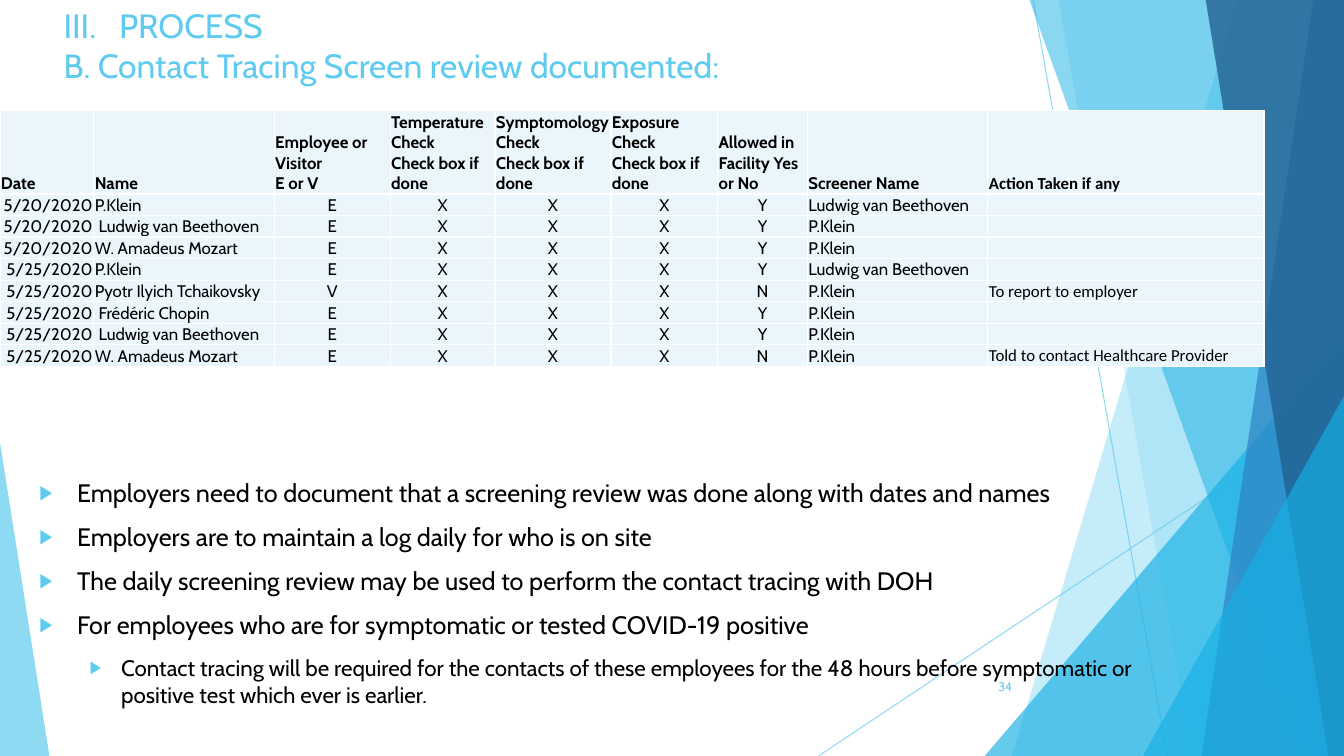
"""Build the contact tracing slide with its screening log and guidance list."""
import lxml.etree
import pptx
import pptx.dml.color
import pptx.enum.shapes
import pptx.enum.text
import pptx.oxml.ns
import pptx.util

Pt = pptx.util.Pt
ALIGN = pptx.enum.text.PP_ALIGN
ANCHOR = pptx.enum.text.MSO_ANCHOR

WIDTH, HEIGHT = 960, 540
SKY, AQUA, BLACK, WHITE, CELL = "5FCBEF", "17B0E4", "000000", "FFFFFF", "EAF6FC"
FONT, ACTION_FONT = "Cabin", "Calibri"

TITLE = ["III.\tPROCESS", "B. Contact Tracing Screen review documented:"]
TITLE_TAB = 39.6
HEADERS = [
    "Date", "Name", "Employee or Visitor\nE or V",
    "Temperature Check\nCheck box if done", "Symptomology Check\nCheck box if done",
    "Exposure Check\nCheck box if done", "Allowed in Facility Yes or No",
    "Screener Name", "Action Taken if any",
]
LOG = [
    ("5/20/2020", "P.Klein", "E", "Y", "Ludwig van Beethoven", ""),
    ("5/20/2020", " Ludwig van Beethoven", "E", "Y", "P.Klein", ""),
    ("5/20/2020", "W. Amadeus Mozart", "E", "Y", "P.Klein", ""),
    ("5/25/2020", "P.Klein", "E", "Y", "Ludwig van Beethoven", ""),
    ("5/25/2020", "Pyotr Ilyich Tchaikovsky", "V", "N", "P.Klein", "To report to employer"),
    ("5/25/2020", " Frédéric Chopin", "E", "Y", "P.Klein", ""),
    ("5/25/2020", " Ludwig van Beethoven", "E", "Y", "P.Klein", ""),
    ("5/25/2020", "W. Amadeus Mozart", "E", "N", "P.Klein", "Told to contact Healthcare Provider"),
]
CHECKS = ("X", "X", "X")
COLUMN_WIDTHS = [67, 128.9, 82.8, 74.9, 82.8, 76.3, 64.1, 128.9, 197.3]
COLUMN_ALIGN = [ALIGN.RIGHT, ALIGN.LEFT] + [ALIGN.CENTER] * 5 + [ALIGN.LEFT] * 2
HEADER_HEIGHT, ROW_HEIGHT = 43.2, 14.5

POINTS = [
    (0, "Employers need to document that a screening review was done along with dates and names"),
    (0, "Employers are to maintain a log daily for who is on site"),
    (0, "The daily screening review may be used to perform the contact tracing with DOH"),
    (0, "For employees who are for symptomatic or tested COVID-19 positive"),
    (1, "Contact tracing will be required for the contacts of these employees for the 48 hours "
        "before symptomatic or positive test which ever is earlier."),
]
LEVELS = [(18, 27, 27), (16, 58.5, 22.5)]

RAYS = [(738, 0, 833.8, HEIGHT), (WIDTH, 290.2, 584.6, HEIGHT)]
FACETS = [
    ("band", (884.2, 722.9), SKY, 36),
    ("band", (756, 851.8), SKY, 20),
    ("triangle", (703.4, 239.8, 256.6, 1), AQUA, 66),
    ("band", (735.1, 929.5), AQUA, 50),
    ("band", (938.2, 858.2), "2E83C3", 70),
    ("band", (861.1, 949), "226292", 80),
    ("triangle", (816.5, 283, 143.5, 1), AQUA, 66),
    ("triangle", (0, 316.1, 35.3, 0), SKY, 70),
]
BAND_TOP = -0.7


def color(value):
    return pptx.dml.color.RGBColor.from_string(value)


def add_xml(parent, tag, **attributes):
    return lxml.etree.SubElement(parent, pptx.oxml.ns.qn(tag), attributes)


def paint(fill, value, opacity):
    fill.solid()
    fill.fore_color.rgb = color(value)
    tint = fill._xPr.find(".//" + pptx.oxml.ns.qn("a:srgbClr"))
    add_xml(tint, "a:alpha", val=str(opacity * 1000))


def write(paragraph, text, size, value, font=FONT, bold=False):
    for index, line in enumerate(text.split("\n")):
        if index:
            paragraph.add_line_break()
        run = paragraph.add_run()
        run.text = line
        run.font.size, run.font.name, run.font.bold = Pt(size), font, bold
        run.font.color.rgb = color(value)


def place(shape, left, top, width, height):
    shape.left, shape.top, shape.width, shape.height = map(Pt, (left, top, width, height))


def add_decoration(shapes):
    for ray in RAYS:
        connector = shapes.add_connector(
            pptx.enum.shapes.MSO_CONNECTOR.STRAIGHT, *map(Pt, ray))
        connector.line.width = Pt(0.75)
        paint(connector.line.fill, SKY, 70)
        add_xml(connector._element.spPr, "a:effectLst")
    for kind, geometry, value, opacity in FACETS:
        if kind == "band":
            upper, lower = geometry
            builder = shapes.build_freeform(Pt(upper), Pt(BAND_TOP))
            corners = [(WIDTH, BAND_TOP), (WIDTH, HEIGHT), (lower, HEIGHT)]
            builder.add_line_segments([(Pt(x), Pt(y)) for x, y in corners])
            facet = builder.convert_to_shape()
        else:
            left, top, width, apex = geometry
            facet = shapes.add_shape(
                pptx.enum.shapes.MSO_SHAPE.ISOSCELES_TRIANGLE,
                Pt(left), Pt(top), Pt(width), Pt(HEIGHT - top))
            facet.adjustments[0] = apex
        facet.shadow.inherit = False
        facet.line.fill.background()
        paint(facet.fill, value, opacity)


def fill_title(title):
    place(title, 38.2, 0, 676.8, 103.7)
    frame = title.text_frame
    frame.word_wrap = True
    frame.auto_size = pptx.enum.text.MSO_AUTO_SIZE.NONE
    frame.vertical_anchor = ANCHOR.TOP
    paragraph = frame.paragraphs[0]
    paragraph.alignment = ALIGN.LEFT
    tabs = add_xml(paragraph._p.get_or_add_pPr(), "a:tabLst")
    add_xml(tabs, "a:tab", pos=str(Pt(TITLE_TAB)), algn="l")
    write(paragraph, "\n".join(TITLE), 24, SKY)


def format_cell(cell):
    cell.vertical_anchor = ANCHOR.BOTTOM
    cell.margin_left = cell.margin_right = cell.margin_top = Pt(0.72)
    cell.margin_bottom = 0
    properties = cell._tc.get_or_add_tcPr()
    for side in "LRTB":
        border = add_xml(properties, "a:ln" + side, w=str(Pt(1)))
        add_xml(add_xml(border, "a:solidFill"), "a:srgbClr", val=WHITE)
    cell.fill.solid()
    cell.fill.fore_color.rgb = color(CELL)


def add_log(shapes):
    rows = [HEADERS] + [entry[:3] + CHECKS + entry[3:] for entry in LOG]
    heights = [HEADER_HEIGHT] + [ROW_HEIGHT] * len(LOG)
    table = shapes.add_table(
        len(rows), len(HEADERS), 0, Pt(79.2), Pt(sum(COLUMN_WIDTHS)), Pt(sum(heights))).table
    table.first_row = table.horz_banding = False
    for column, width in zip(table.columns, COLUMN_WIDTHS):
        column.width = Pt(width)
    for row_index, values in enumerate(rows):
        table.rows[row_index].height = Pt(heights[row_index])
        header = row_index == 0
        for column_index, text in enumerate(values):
            cell = table.cell(row_index, column_index)
            format_cell(cell)
            paragraph = cell.text_frame.paragraphs[0]
            paragraph.alignment = ALIGN.LEFT if header else COLUMN_ALIGN[column_index]
            if text:
                font = ACTION_FONT if column_index == len(HEADERS) - 1 else FONT
                write(paragraph, text, 12, BLACK, font, header)
            else:
                add_xml(paragraph._p, "a:endParaRPr", sz="1200")


def fill_points(body):
    place(body, 20.9, 337, 820.8, 126)
    frame = body.text_frame
    frame.word_wrap = True
    frame.auto_size = pptx.enum.text.MSO_AUTO_SIZE.NONE
    frame.vertical_anchor = ANCHOR.TOP
    for index, (level, text) in enumerate(POINTS):
        paragraph = frame.add_paragraph() if index else frame.paragraphs[0]
        size, margin, hanging = LEVELS[level]
        paragraph.level = level
        paragraph.space_before = Pt(10)
        properties = paragraph._p.get_or_add_pPr()
        properties.set("marL", str(Pt(margin)))
        properties.set("indent", str(-Pt(hanging)))
        add_xml(add_xml(properties, "a:buClr"), "a:srgbClr", val=SKY)
        add_xml(properties, "a:buSzPct", val="80000")
        add_xml(properties, "a:buFont", typeface=FONT)
        add_xml(properties, "a:buChar", char="▶")
        write(paragraph, text, size, BLACK)


def add_slide_number(shapes):
    frame = shapes.add_textbox(Pt(676.1), Pt(475.9), Pt(54), Pt(28.8)).text_frame
    frame.word_wrap = True
    frame.vertical_anchor = ANCHOR.MIDDLE
    frame.paragraphs[0].alignment = ALIGN.RIGHT
    write(frame.paragraphs[0], "34", 9, SKY)


def main():
    presentation = pptx.Presentation()
    presentation.slide_width, presentation.slide_height = Pt(WIDTH), Pt(HEIGHT)
    slide = presentation.slides.add_slide(presentation.slide_layouts[1])
    shapes = slide.shapes
    title, body = slide.placeholders
    add_decoration(shapes)
    shapes._spTree.append(title._element)
    fill_title(title)
    add_log(shapes)
    shapes._spTree.append(body._element)
    fill_points(body)
    add_slide_number(shapes)
    presentation.save("out.pptx")


if __name__ == "__main__":
    main()
